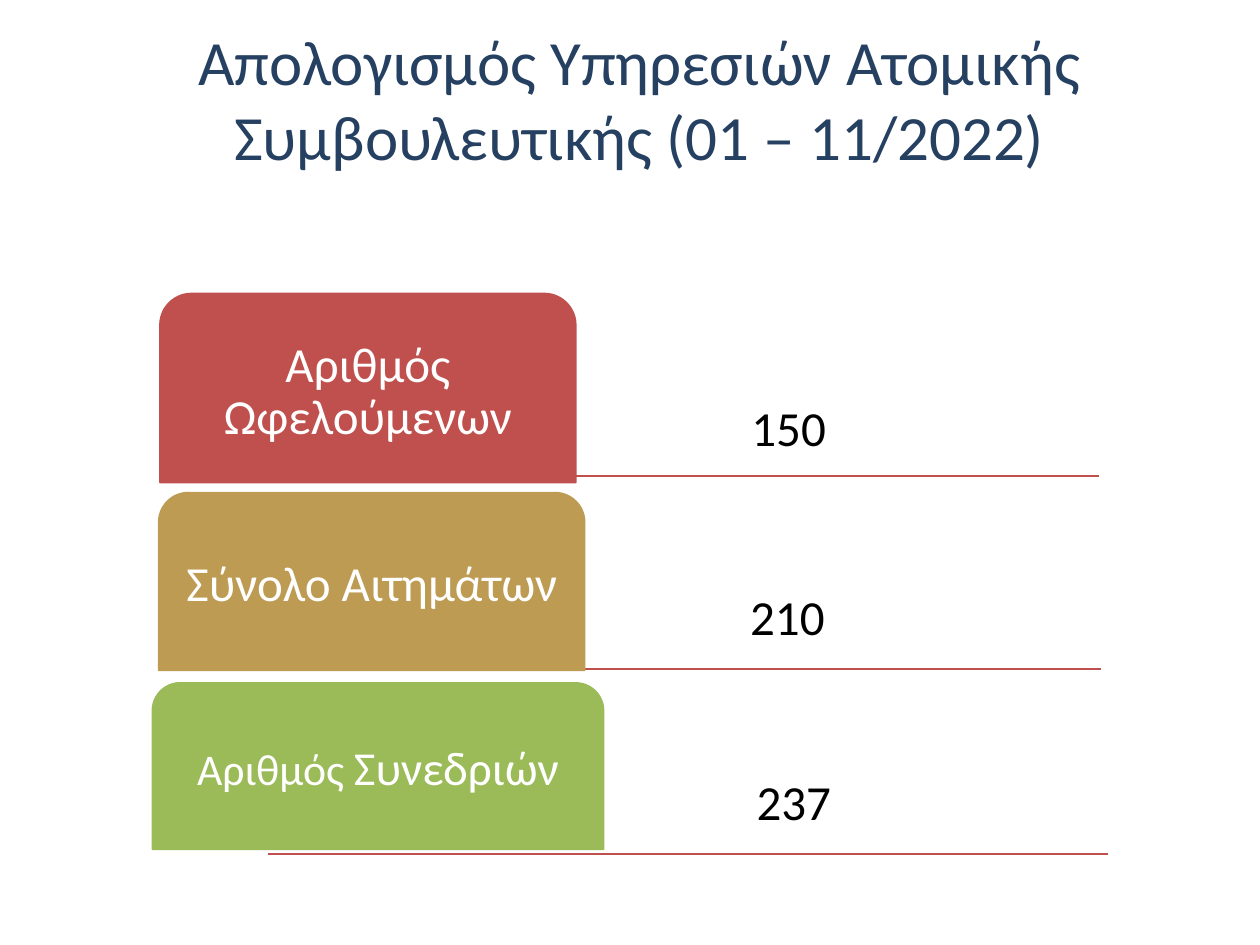
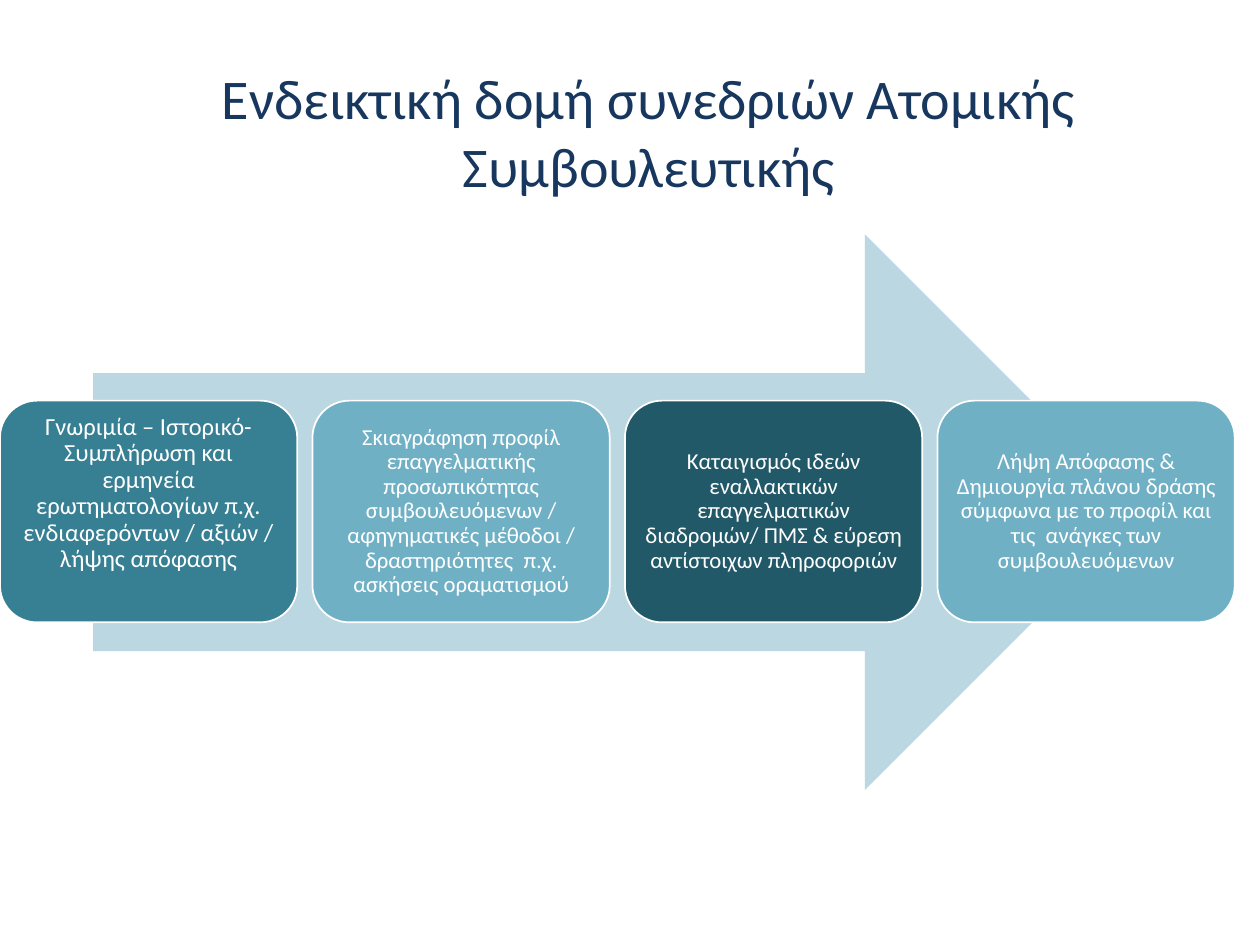
import pptx
import pptx.util
import pptx.dml.color
import pptx.enum.shapes
import pptx.enum.text
import pptx.oxml.ns
from lxml import etree

Inches = pptx.util.Inches
Kind = pptx.enum.shapes.MSO_SHAPE
Anchor = pptx.enum.text.MSO_ANCHOR
Align = pptx.enum.text.PP_ALIGN

FONT = "Calibri"
HUES = {
    "navy": "254061", "blue": "17375E", "black": "000000", "white": "FFFFFF",
    "red": "C0504D", "gold": "BD9B53", "green": "9BBB59",
    "pale": "BAD7E2", "teal": "377F92", "sky": "70B0C5", "deep": "215968",
}


def write(shape, *parts, hue="white", inset=0.06, foot=None, anchor=Anchor.MIDDLE, lead=0.9):
    frame = shape.text_frame
    frame.word_wrap = True
    frame.auto_size = pptx.enum.text.MSO_AUTO_SIZE.NONE
    frame.vertical_anchor = anchor
    frame.margin_left = frame.margin_right = frame.margin_top = Inches(inset)
    frame.margin_bottom = Inches(inset if foot is None else foot)
    para = frame.paragraphs[0]
    para.alignment = Align.CENTER
    para.line_spacing = lead
    for text, size in parts:
        run = para.add_run()
        run.text = text
        run.font.name = FONT
        run.font.size = pptx.util.Pt(size)
        run.font.color.rgb = pptx.dml.color.RGBColor.from_string(HUES[hue])


def draw(slide, kind, box, fill, edge=None):
    shape = slide.shapes.add_shape(kind, *map(Inches, box))
    shape.shadow.inherit = False
    shape.fill.solid()
    shape.fill.fore_color.rgb = pptx.dml.color.RGBColor.from_string(HUES[fill])
    if edge:
        shape.line.color.rgb = pptx.dml.color.RGBColor.from_string(HUES[edge])
        shape.line.width = pptx.util.Pt(1)
    else:
        shape.line.fill.background()
    return shape


deck = pptx.Presentation()
deck.slide_width = Inches(10)
deck.slide_height = Inches(7.5)

titles = [
    ("Απολογισμός Υπηρεσιών Ατομικής Συμβουλευτικής (01 – 11/2022)", 36, "navy", (0.5, 0.1, 9.15, 1.3)),
    ("Ενδεικτική δομή συνεδριών Ατομικής Συμβουλευτικής", 32, "blue", (0.5, 0.29, 9.3, 1.45)),
]
slides = []
for text, size, hue, box in titles:
    slide = deck.slides.add_slide(deck.slide_layouts[5])
    title = slide.shapes.title
    title.left, title.top, title.width, title.height = map(Inches, box)
    write(title, (text, size), hue=hue, inset=0.1, foot=0.05, lead=1)
    slides.append(slide)
count, steps = slides

rows = [
    ([("Αριθμός Ωφελούμενων", 28)], "red", (1.27, 2.33, 3.3, 1.5), 2.06, 3.78, "150", 6.26, 3.69),
    ([("Σύνολο Αιτημάτων", 28)], "gold", (1.26, 3.91, 3.38, 1.41), 2.08, 5.31, "210", 6.25, 5.19),
    ([("Αριθμός ", 25), ("Συνεδριών", 27)], "green", (1.21, 5.42, 3.58, 1.32), 2.13, 6.78, "237", 6.3, 6.66),
]
for label, hue, box, left, base, total, mid, low in rows:
    rule = count.shapes.add_connector(
        pptx.enum.shapes.MSO_CONNECTOR.STRAIGHT,
        Inches(left), Inches(base), Inches(left + 6.66), Inches(base))
    rule.line.color.rgb = pptx.dml.color.RGBColor.from_string(HUES["red"])
    rule.line.width = pptx.util.Pt(1)
    etree.SubElement(rule._element.spPr, pptx.oxml.ns.qn("a:effectLst"))
    write(draw(count, Kind.ROUND_2_SAME_RECTANGLE, box, hue, hue), *label)
    value = count.shapes.add_textbox(Inches(mid - 1.4), Inches(low - 1.2), Inches(2.8), Inches(1.2))
    write(value, (total, 28), hue="black", anchor=Anchor.BOTTOM)

draw(steps, Kind.RIGHT_ARROW, (0.74, 1.86, 8.33, 4.41), "pale")
cards = [
    ("Γνωριμία – Ιστορικό- Συμπλήρωση και ερμηνεία ερωτηματολογίων π.χ. ενδιαφερόντων / αξιών / λήψης απόφασης",
     14, "teal", 0.33),
    ("Σκιαγράφηση προφίλ επαγγελματικής προσωπικότητας συμβουλευόμενων / αφηγηματικές μέθοδοι / "
     "δραστηριότητες  π.χ. ασκήσεις οραματισμού", 13, "sky", 0.05),
    ("Καταιγισμός ιδεών εναλλακτικών επαγγελματικών διαδρομών/ ΠΜΣ & εύρεση αντίστοιχων πληροφοριών",
     13, "deep", 0.05),
    ("Λήψη Απόφασης & Δημιουργία πλάνου δράσης σύμφωνα με το προφίλ και τις  ανάγκες των συμβουλευόμενων",
     13, "sky", 0.05),
]
for index, (text, size, hue, foot) in enumerate(cards):
    card = draw(steps, Kind.ROUNDED_RECTANGLE, (index * 2.48, 3.18, 2.36, 1.76), hue, "white")
    write(card, (text, size), inset=0.05, foot=foot)

deck.save("out.pptx")
